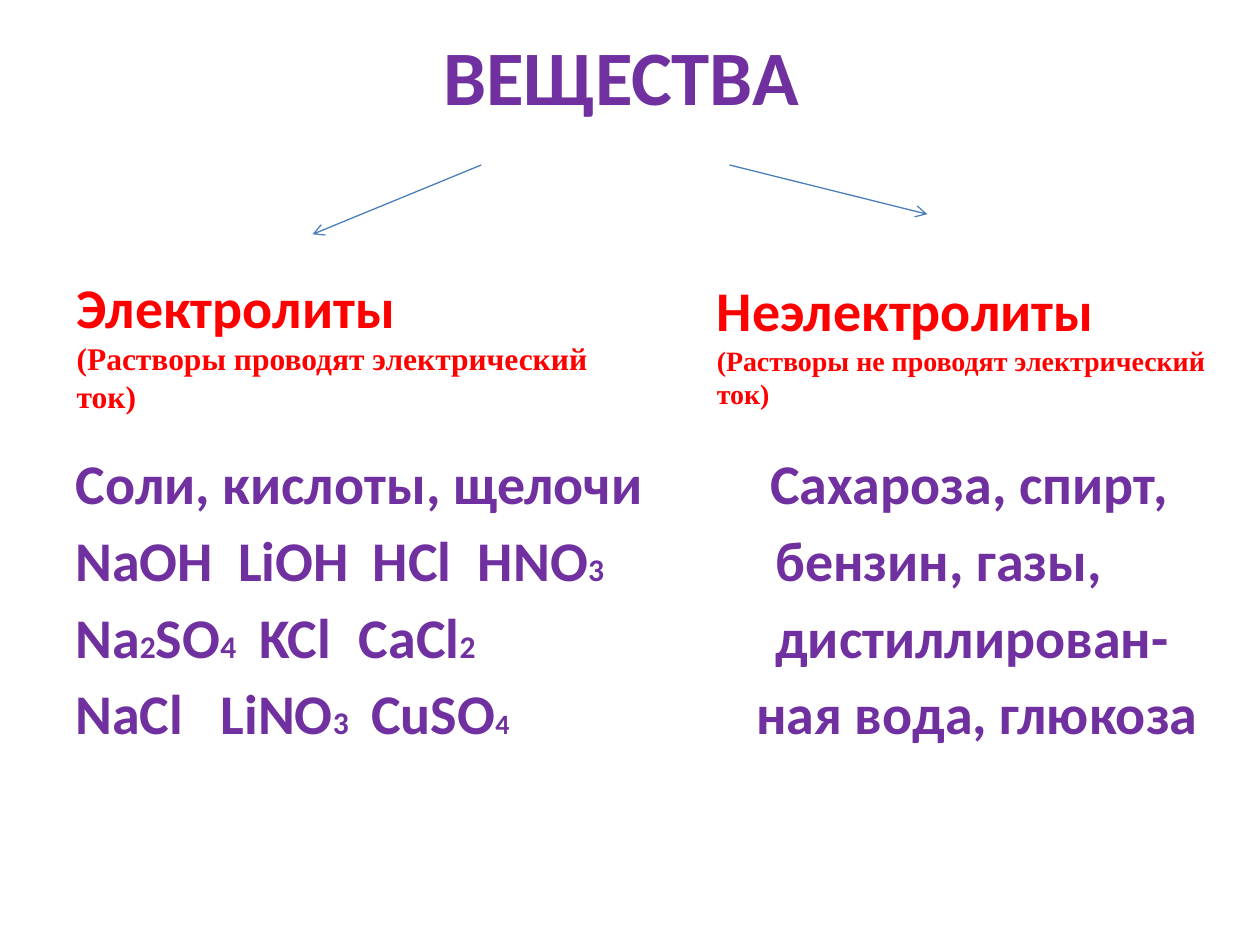
from dataclasses import dataclass

from lxml import etree
from pptx import Presentation
from pptx import util as u
from pptx.dml.color import RGBColor
from pptx.enum import shapes, text
from pptx.oxml import ns

COLORS = {"title": "7030A0", "heading": "FF0000", "arrow": "4B7EBC"}
LARGE, SMALL, TINY = 32, 18, 16


@dataclass(frozen=True)
class Span:
    words: str
    size: float = LARGE


@dataclass(frozen=True)
class Line:
    spans: tuple[Span, ...]
    font: str = "Calibri"
    tabs: tuple[float, ...] = ()


@dataclass(frozen=True)
class Block:
    left: float
    top: float
    width: float
    height: float
    color: str
    lines: tuple[Line, ...]
    gap: float = 0
    align: text.PP_ALIGN = text.PP_ALIGN.LEFT
    anchor: text.MSO_ANCHOR = text.MSO_ANCHOR.TOP


@dataclass(frozen=True)
class Arrow:
    start: tuple[float, float]
    end: tuple[float, float]


def heading(name: str, size: float, *notes: str) -> tuple[Line, ...]:
    details = (Line((Span(note, size),), "Times New Roman") for note in notes)
    return (Line((Span(name),)), *details)


BLOCKS = (
    Block(31, -13.7, 648, 112.3, "title", (Line((Span("ВЕЩЕСТВА", 44),)),),
          align=text.PP_ALIGN.CENTER, anchor=text.MSO_ANCHOR.MIDDLE),
    Block(36, 252.7, 658.8, 229.7, "title", (
        Line((Span("Соли, кислоты, щелочи\tСахароза, спирт,"),), tabs=(397,)),
        Line((Span("NaOH\tLiOH\tHCl\tHNO"), Span("3", SMALL),
              Span("\tбензин, газы,")), tabs=(93, 170, 230, 400)),
        Line((Span("Na"), Span("2", SMALL), Span("SO"), Span("4", SMALL),
              Span("\tKCl\tCaCl"), Span("2", SMALL),
              Span("\tдистиллирован-")), tabs=(105, 162, 400)),
        Line((Span("NaCl\tLiNO"), Span("3", SMALL), Span("\tCuSO"),
              Span("4", TINY), Span("\tная вода, глюкоза")),
             tabs=(83, 169, 389)),
    ), gap=5.5),
    Block(36.7, 151.9, 325.4, 90, "heading", heading(
        "Электролиты", SMALL, "(Растворы проводят электрический ток)")),
    Block(402.5, 154.1, 298, 123.8, "heading", heading(
        "Неэлектролиты", TINY, "(Растворы не проводят электрический", "ток)")),
)

ARROWS = (
    Arrow((275, 94.3), (178.6, 133.9)),
    Arrow((416.9, 94.3), (529.9, 122.4)),
)


def set_tabs(para, stops: tuple[float, ...]) -> None:
    properties = para._p.get_or_add_pPr()
    tab_list = etree.SubElement(properties, ns.qn("a:tabLst"))
    for stop in stops:
        etree.SubElement(tab_list, ns.qn("a:tab"), pos=str(u.Pt(stop)), algn="l")


def add_block(page, block: Block) -> None:
    box = page.shapes.add_textbox(
        u.Pt(block.left), u.Pt(block.top), u.Pt(block.width), u.Pt(block.height))
    frame = box.text_frame
    frame.word_wrap = True
    frame.vertical_anchor = block.anchor
    for index, line in enumerate(block.lines):
        para = frame.add_paragraph() if index else frame.paragraphs[0]
        para.alignment = block.align
        para.space_before = u.Pt(block.gap)
        if line.tabs:
            set_tabs(para, line.tabs)
        para.font.name = line.font
        para.font.bold = True
        para.font.color.rgb = RGBColor.from_string(COLORS[block.color])
        for span in line.spans:
            run = para.add_run()
            run.text = span.words
            run.font.size = u.Pt(span.size)


def add_arrow(page, arrow: Arrow) -> None:
    connector = page.shapes.add_connector(
        shapes.MSO_CONNECTOR.STRAIGHT,
        *(u.Pt(value) for value in arrow.start + arrow.end))
    connector.line.width = u.Pt(0.75)
    connector.line.color.rgb = RGBColor.from_string(COLORS["arrow"])
    etree.SubElement(connector.line._get_or_add_ln(), ns.qn("a:tailEnd"), type="arrow")
    etree.SubElement(connector._element.spPr, ns.qn("a:effectLst"))


def main() -> None:
    deck = Presentation()
    deck.slide_width, deck.slide_height = u.Pt(720), u.Pt(540)
    page = deck.slides.add_slide(deck.slide_layouts[6])
    for block in BLOCKS:
        add_block(page, block)
    for arrow in ARROWS:
        add_arrow(page, arrow)
    deck.save("out.pptx")


if __name__ == "__main__":
    main()
